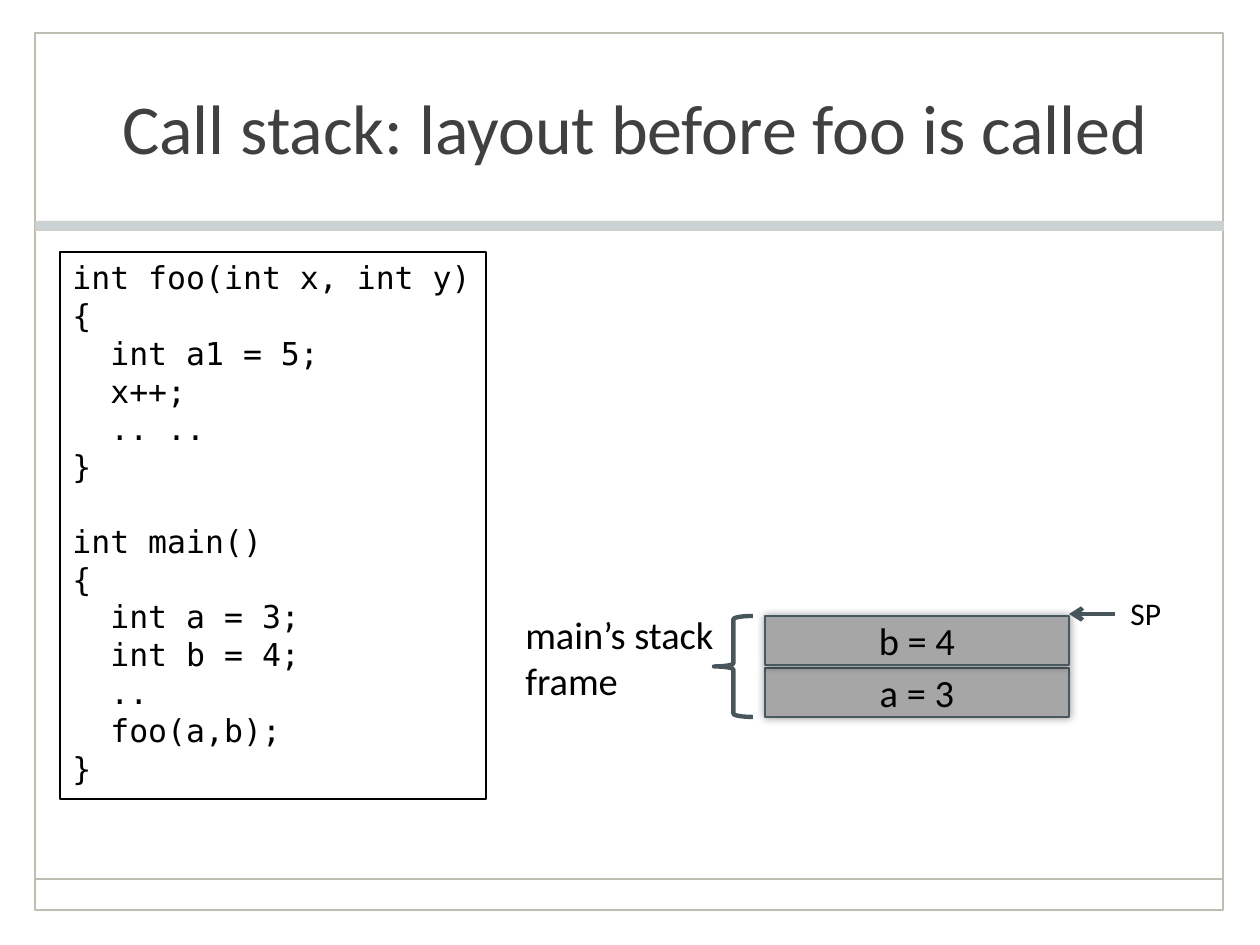
from lxml import etree
from pptx import Presentation
from pptx.dml.color import RGBColor
from pptx.enum.shapes import MSO_CONNECTOR, MSO_SHAPE
from pptx.enum.text import MSO_ANCHOR, MSO_AUTO_SIZE, PP_ALIGN
from pptx.oxml.ns import qn
from pptx.util import Emu, Pt

RECTANGLE, LEFT_BRACE = MSO_SHAPE.RECTANGLE, MSO_SHAPE.LEFT_BRACE
STRAIGHT = MSO_CONNECTOR.STRAIGHT
LEFT, CENTER = PP_ALIGN.LEFT, PP_ALIGN.CENTER
TOP, MIDDLE = MSO_ANCHOR.TOP, MSO_ANCHOR.MIDDLE
FIT_SHAPE, NO_FIT = MSO_AUTO_SIZE.SHAPE_TO_FIT_TEXT, MSO_AUTO_SIZE.NONE

BLACK = RGBColor(0x00, 0x00, 0x00)
TITLE_GRAY = RGBColor(0x40, 0x40, 0x40)
FRAME_LINE = RGBColor(0xBE, 0xBD, 0xB2)
BAR_FILL = RGBColor(0xCB, 0xD2, 0xD5)
BAR_LINE = RGBColor(0xD1, 0xD0, 0xC8)
CELL_FILL = RGBColor(0xA6, 0xA6, 0xA6)
CELL_LINE = RGBColor(0x49, 0x58, 0x5E)
SLATE = RGBColor(0x48, 0x56, 0x5C)

BODY_FONT, CODE_FONT = "Calibri", "DejaVu Sans Mono"
PX_PER_INCH = 126

FOO_CODE = """int foo(int x, int y)
{
  int a1 = 5;
  x++;
  .. ..
}"""
MAIN_CODE = """int main()
{
  int a = 3;
  int b = 4;
  ..
  foo(a,b);
}"""


def px(length):
    return Emu(round(length * 914400 / PX_PER_INCH))


def write_text(frame, text, size, font=BODY_FONT, color=BLACK, align=LEFT,
               anchor=TOP, wrap=False, fit=FIT_SHAPE, gap_before=None):
    frame.word_wrap = wrap
    frame.auto_size = fit
    frame.vertical_anchor = anchor
    for index, line in enumerate(text.split("\n")):
        paragraph = frame.paragraphs[0] if index == 0 else frame.add_paragraph()
        paragraph.alignment = align
        if line == gap_before:
            paragraph.space_before = Pt(21)
        run = paragraph.add_run()
        run.text = line
        run.font.name = font
        run.font.size = Pt(size)
        run.font.color.rgb = color


class SlideBuilder:
    """Draws styled elements on one slide, placed in px."""

    def __init__(self, slide):
        self.slide = slide

    def title(self, text, left, top, width, height):
        shape = self.slide.shapes.title
        shape.left, shape.top = px(left), px(top)
        shape.width, shape.height = px(width), px(height)
        write_text(shape.text_frame, text, 40, color=TITLE_GRAY, align=CENTER,
                   anchor=MIDDLE, wrap=True, fit=NO_FIT)

    def shape(self, kind, left, top, width, height, line, weight, fill=None):
        shape = self.slide.shapes.add_shape(
            kind, px(left), px(top), px(width), px(height))
        shape.shadow.inherit = False
        if fill is None:
            shape.fill.background()
        else:
            shape.fill.solid()
            shape.fill.fore_color.rgb = fill
        shape.line.color.rgb = line
        shape.line.width = Pt(weight)
        return shape

    def code(self, text, left, top, width, height, gap_before):
        shape = self.shape(RECTANGLE, left, top, width, height, BLACK, 0.75)
        write_text(shape.text_frame, text, 18, font=CODE_FONT,
                   gap_before=gap_before)

    def cell(self, text, left, top, width, height):
        shape = self.shape(RECTANGLE, left, top, width, height,
                           CELL_LINE, 1, CELL_FILL)
        effects = shape._element.spPr.find(qn("a:effectLst"))
        shadow = etree.SubElement(effects, qn("a:outerShdw"),
                                  blurRad=str(Pt(5)), dist="0", dir="0")
        color = etree.SubElement(shadow, qn("a:srgbClr"), val=str(BLACK))
        etree.SubElement(color, qn("a:alpha"), val="40000")
        write_text(shape.text_frame, text, 22, align=CENTER, anchor=MIDDLE,
                   wrap=True, fit=NO_FIT)

    def label(self, text, left, top, width, height, size):
        box = self.slide.shapes.add_textbox(
            px(left), px(top), px(width), px(height))
        write_text(box.text_frame, text, size)

    def line(self, start, end, color, weight, arrow=False):
        connector = self.slide.shapes.add_connector(
            STRAIGHT, *(px(value) for value in start + end))
        connector.line.color.rgb = color
        connector.line.width = Pt(weight)
        if arrow:
            etree.SubElement(connector.line._get_or_add_ln(),
                             qn("a:tailEnd"), type="arrow")
        etree.SubElement(connector._element.spPr, qn("a:effectLst"))


def main():
    presentation = Presentation()
    presentation.slide_width, presentation.slide_height = px(1260), px(945)
    slide = presentation.slides.add_slide(presentation.slide_layouts[5])
    builder = SlideBuilder(slide)

    builder.shape(RECTANGLE, 35, 33, 1188, 877, FRAME_LINE, 1)
    builder.line((35, 879), (1223, 879), FRAME_LINE, 1)
    builder.shape(RECTANGLE, 35, 221, 1188, 9, BAR_LINE, 0.25, BAR_FILL)
    builder.title("Call stack: layout before foo is called", 60, 34, 1150, 185)

    builder.code(FOO_CODE + "\n" + MAIN_CODE, 60, 252, 426, 547,
                 gap_before="int main()")

    stack_left, stack_top, stack_width = 765, 616, 304
    cell_height, cell_pitch = 49, 52
    for row, text in reversed(list(enumerate(("b = 4", "a = 3")))):
        builder.cell(text, stack_left, stack_top + row * cell_pitch,
                     stack_width, cell_height)
    builder.shape(LEFT_BRACE, 714, stack_top, 39, cell_pitch + cell_height,
                  SLATE, 2.5)
    builder.label("main’s stack\nframe", 513, 605, 224, 106, 22)
    builder.line((1115, 614), (stack_left + stack_width, 614), SLATE, 2.5,
                 arrow=True)
    builder.label("SP", 1118, 588, 63, 50, 18)

    presentation.save("out.pptx")


if __name__ == "__main__":
    main()
